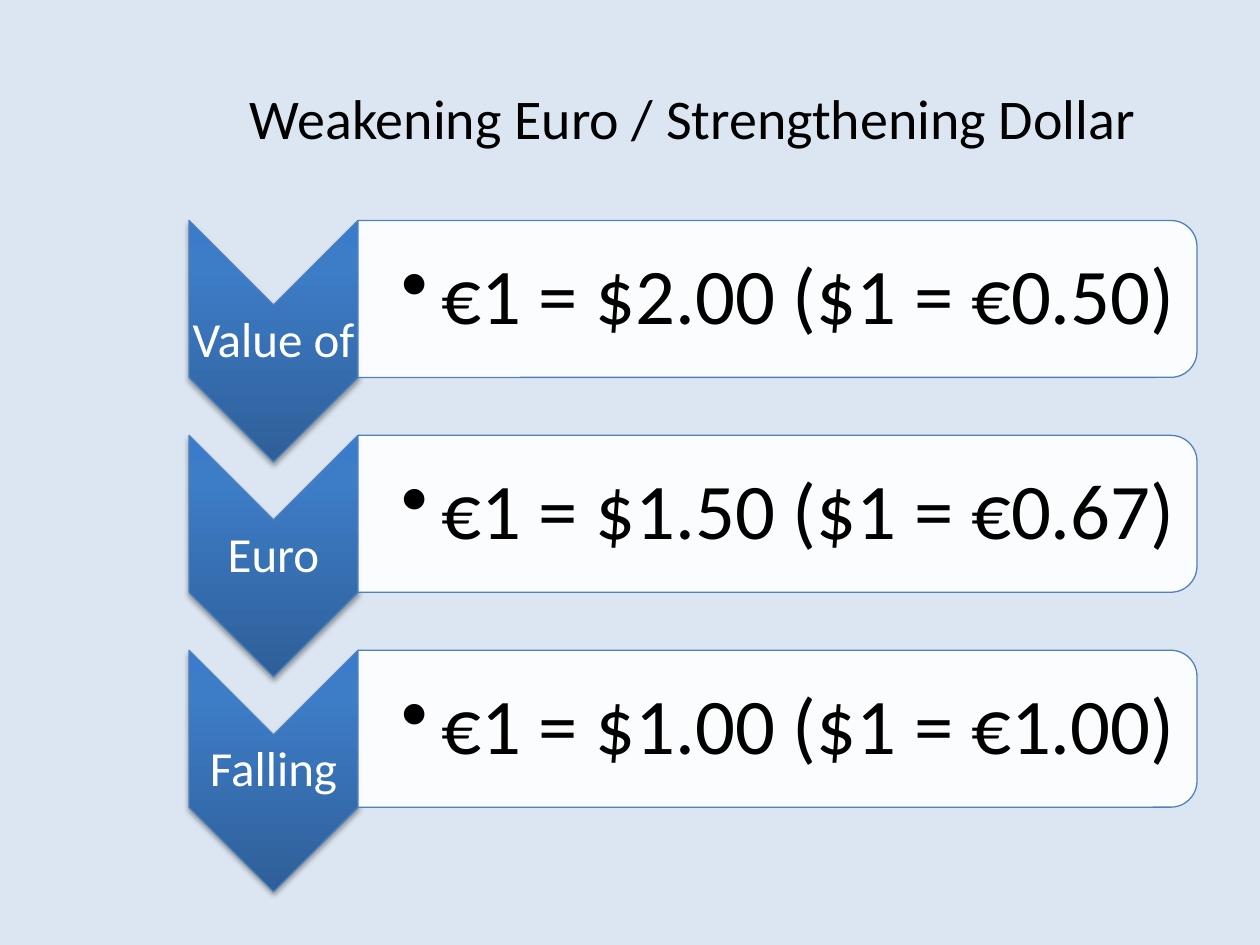
from lxml import etree
from pptx import Presentation
from pptx.dml.color import RGBColor
from pptx.enum.shapes import MSO_SHAPE as Shape
from pptx.enum.text import MSO_ANCHOR as Anchor, PP_ALIGN as Align
from pptx.oxml import parse_xml
from pptx.oxml.ns import nsdecls, qn
from pptx.util import Pt

COLORS = {
    "background": "DCE6F2",
    "text": "000000",
    "label": "FFFFFF",
    "panel": "FFFFFF",
    "line": "4F81BD",
    "shadow": "000000",
}
CHEVRON_STOPS = [(0, "2F5F99"), (80, "3D7CC7"), (100, "3A7CCB")]
FONT = "Calibri"
ROWS = [
    ("Value of", "€1 = $2.00 ($1 = €0.50)"),
    ("Euro", "€1 = $1.50 ($1 = €0.67)"),
    ("Falling", "€1 = $1.00 ($1 = €1.00)"),
]
ROW_PITCH = 122.8
CHEVRON_WIDTH, CHEVRON_HEIGHT = 96.6, 138
PANEL_HEIGHT = 89.7


def rgb(name):
    return RGBColor.from_string(COLORS[name])


def add_text(slide, box, text, size, color, align=Align.CENTER, insets=(1.5,) * 4, bullet_indent=0):
    """Add one vertically centred paragraph; insets run left, top, right, bottom."""
    frame = slide.shapes.add_textbox(*map(Pt, box)).text_frame
    frame.word_wrap = True
    frame.vertical_anchor = Anchor.MIDDLE
    frame.margin_left, frame.margin_top, frame.margin_right, frame.margin_bottom = map(Pt, insets)
    paragraph = frame.paragraphs[0]
    paragraph.text = text
    paragraph.alignment = align
    if bullet_indent:
        properties = paragraph._p.get_or_add_pPr()
        properties.set("marL", str(Pt(bullet_indent)))
        properties.set("indent", str(-Pt(bullet_indent)))
        etree.SubElement(properties, qn("a:buChar"), char="•")
    paragraph.font.name = FONT
    paragraph.font.size = Pt(size)
    paragraph.font.color.rgb = rgb(color)
    return paragraph


def add_turned_shape(slide, kind, left, top, width, height):
    """Add a shape turned by 90 degrees that covers the given box once turned."""
    shape = slide.shapes.add_shape(
        kind,
        Pt(left + (width - height) / 2), Pt(top + (height - width) / 2),
        Pt(height), Pt(width),
    )
    shape.rotation = 90
    shape.shadow.inherit = False
    shape.line.color.rgb = rgb("line")
    shape.line.width = Pt(0.75)
    return shape


def style_chevron(shape):
    """Give the chevron its upright three-stop gradient and soft shadow."""
    stops = "".join(
        f'<a:gs pos="{position * 1000}"><a:srgbClr val="{color}"/></a:gs>'
        for position, color in CHEVRON_STOPS
    )
    gradient = parse_xml(
        f'<a:gradFill {nsdecls("a")} rotWithShape="0"><a:gsLst>{stops}</a:gsLst>'
        '<a:lin ang="16200000" scaled="0"/></a:gradFill>'
    )
    properties = shape._element.spPr
    properties.find(qn("a:prstGeom")).addnext(gradient)
    properties.find(qn("a:effectLst")).append(parse_xml(
        f'<a:outerShdw {nsdecls("a")} blurRad="{Pt(3.1)}" dist="{Pt(1.8)}" dir="5400000" '
        f'rotWithShape="0"><a:srgbClr val="{COLORS["shadow"]}">'
        '<a:alpha val="35000"/></a:srgbClr></a:outerShdw>'
    ))


def add_rate_row(slide, left, top, width, label, rate):
    chevron = add_turned_shape(slide, Shape.CHEVRON, left, top, CHEVRON_WIDTH, CHEVRON_HEIGHT)
    style_chevron(chevron)
    label_height = CHEVRON_HEIGHT - CHEVRON_WIDTH
    label_box = (left, top + CHEVRON_WIDTH / 2, CHEVRON_WIDTH, label_height)
    add_text(slide, label_box, label, 28, "label").line_spacing = 0.9

    panel_left, panel_width = left + CHEVRON_WIDTH, width - CHEVRON_WIDTH
    panel = add_turned_shape(
        slide, Shape.ROUND_2_SAME_RECTANGLE, panel_left, top, panel_width, PANEL_HEIGHT
    )
    panel.fill.solid()
    panel.fill.fore_color.rgb = rgb("panel")
    color = panel._element.spPr.find(qn("a:solidFill")).find(qn("a:srgbClr"))
    etree.SubElement(color, qn("a:alpha"), val="90000")
    rate_box = (panel_left, top + 4.4, panel_width - 4.4, PANEL_HEIGHT - 8.8)
    add_text(
        slide, rate_box, rate, 45, "text", Align.LEFT, (25, 2, 2, 2), bullet_indent=22.5
    ).line_spacing = 0.9


def add_rate_list(slide, left, top, width):
    for index, (label, rate) in enumerate(ROWS):
        add_rate_row(slide, left, top + index * ROW_PITCH, width, label, rate)


def main():
    presentation = Presentation()
    presentation.slide_width, presentation.slide_height = Pt(720), Pt(540)
    slide = presentation.slides.add_slide(presentation.slide_layouts[6])
    slide.background.fill.solid()
    slide.background.fill.fore_color.rgb = rgb("background")
    add_text(slide, (108, 21.6, 576, 90.7), "Weakening Euro / Strengthening Dollar", 32, "text")
    add_rate_list(slide, 108, 126, 576)
    presentation.save("out.pptx")


if __name__ == "__main__":
    main()
